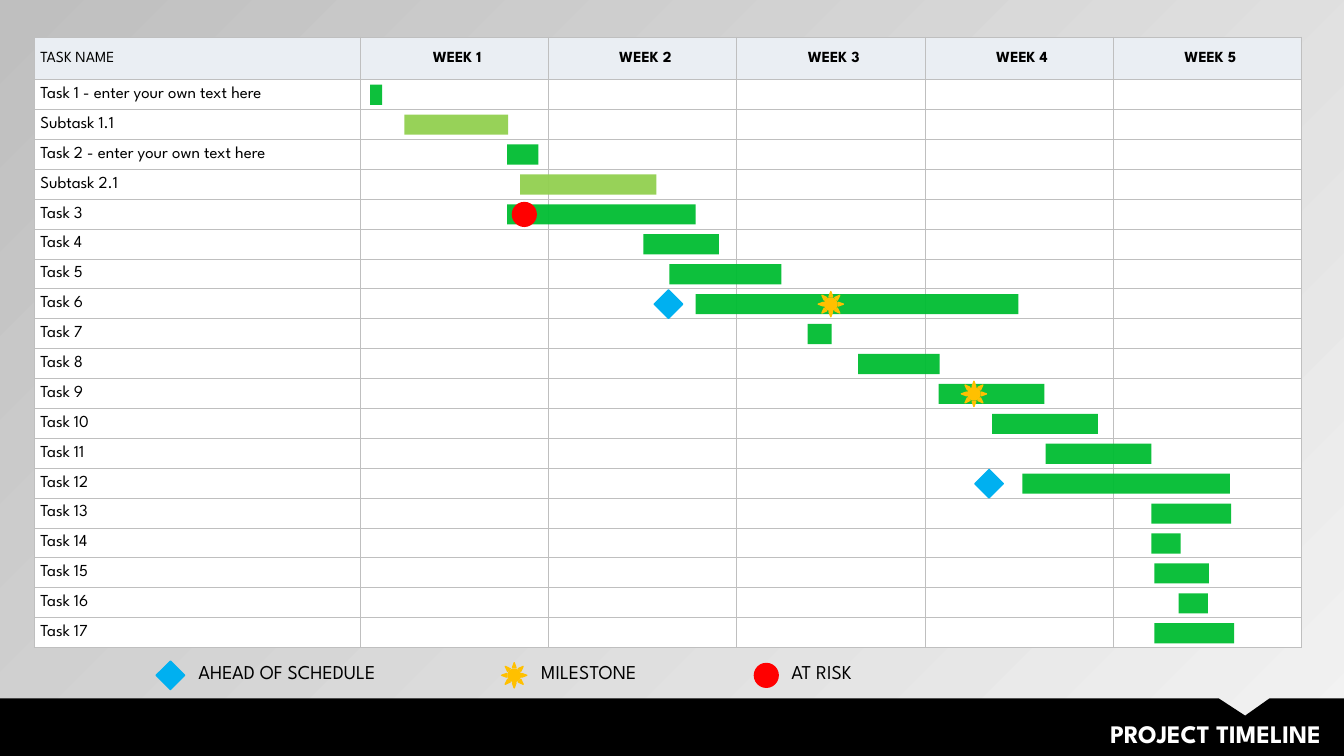
"""Build a five-week project timeline slide with a task table, bars and markers."""
from lxml import etree
from pptx import Presentation
from pptx import util as u
from pptx.dml.color import RGBColor
from pptx.enum import shapes, text
from pptx.oxml.ns import qn

COLORS = {
    "black": "000000", "white": "FFFFFF", "header": "EAEEF3", "grid": "BFBFBF",
    "light": "F2F2F2", "task": "00BD32", "subtask": "92D050",
    "ahead": "00B0F0", "milestone": "FFC000", "risk": "FF0000",
}
TABLE_LEFT, TABLE_TOP, TABLE_WIDTH, TABLE_HEIGHT = 0.34, 0.37, 12.57, 6.06
NAME_WIDTH, HEADER_HEIGHT, BAR_HEIGHT = 3.23, 0.42, 0.2
WEEKS = [f"WEEK {number}" for number in range(1, 6)]
TASKS = [
    ("Task 1 - enter your own text here", 3.67, 0.12),
    ("Subtask 1.1", 4.01, 1.03),
    ("Task 2 - enter your own text here", 5.03, 0.31),
    ("Subtask 2.1", 5.16, 1.35),
    ("Task 3", 5.03, 1.87),
    ("Task 4", 6.38, 0.75),
    ("Task 5", 6.64, 1.11),
    ("Task 6", 6.9, 3.2),
    ("Task 7", 8.01, 0.24),
    ("Task 8", 8.51, 0.81),
    ("Task 9", 9.31, 1.05),
    ("Task 10", 9.84, 1.05),
    ("Task 11", 10.37, 1.05),
    ("Task 12", 10.14, 2.06),
    ("Task 13", 11.42, 0.79),
    ("Task 14", 11.42, 0.29),
    ("Task 15", 11.45, 0.54),
    ("Task 16", 11.69, 0.29),
    ("Task 17", 11.45, 0.79),
]
ROW_HEIGHT = (TABLE_HEIGHT - HEADER_HEIGHT) / len(TASKS)
FIRST_BAR_CENTER = 0.94
MARKERS = {
    "ahead": (shapes.MSO_SHAPE.RECTANGLE, 0.2, True),
    "milestone": (shapes.MSO_SHAPE.SUN, 0.25, True),
    "risk": (shapes.MSO_SHAPE.OVAL, 0.25, False),
}
TASK_MARKERS = [
    ("risk", "Task 3", 5.2), ("milestone", "Task 6", 8.24), ("milestone", "Task 9", 9.66),
    ("ahead", "Task 6", 6.63), ("ahead", "Task 12", 9.81),
]
LEGEND = [
    ("ahead", 1.69, "AHEAD OF SCHEDULE", 1.87, 2.22),
    ("milestone", 5.1, "MILESTONE", 5.27, 1.23),
    ("risk", 7.6, "AT RISK", 7.75, 0.86),
]


def color(name):
    return RGBColor.from_string(COLORS[name])


class TimelineSlide:
    def __init__(self, presentation, font="League Spartan"):
        self.font = font
        self.slide = presentation.slides.add_slide(presentation.slide_layouts[6])

    def background(self, start, end, angle):
        fill = self.slide.background.fill
        fill.gradient()
        fill.gradient_angle = angle
        for stop, name in zip(fill.gradient_stops, (start, end)):
            stop.color.rgb = color(name)

    def run(self, paragraph, words, size, name="black", bold=False):
        run = paragraph.add_run()
        run.text = words
        run.font.name = self.font
        run.font.size = u.Pt(size)
        run.font.bold = bold
        run.font.color.rgb = color(name)

    def label(self, left, top, width, height, words, size, name="black",
              bold=False, align=text.PP_ALIGN.LEFT, wrap=False):
        box = self.slide.shapes.add_textbox(*map(u.Inches, (left, top, width, height)))
        frame = box.text_frame
        frame.word_wrap = wrap
        frame.auto_size = text.MSO_AUTO_SIZE.SHAPE_TO_FIT_TEXT
        frame.paragraphs[0].alignment = align
        self.run(frame.paragraphs[0], words, size, name, bold)

    def paint(self, shape, name, line=False, alpha=None):
        shape.shadow.inherit = False
        shape.fill.solid()
        shape.fill.fore_color.rgb = color(name)
        if line:
            shape.line.color.rgb = color(name)
            shape.line.width = u.Pt(1)
        else:
            shape.line.fill.background()
        if alpha:
            paint = shape._element.spPr.find(qn("a:solidFill"))[0]
            etree.SubElement(paint, qn("a:alpha"), val=str(alpha * 1000))

    def shape(self, kind, left, top, width, height, name, **style):
        shape = self.slide.shapes.add_shape(
            kind, *map(u.Inches, (left, top, width, height)))
        self.paint(shape, name, **style)
        return shape

    def marker(self, name, center_x, center_y):
        kind, size, outlined = MARKERS[name]
        shape = self.shape(kind, center_x - size / 2, center_y - size / 2,
                           size, size, name, line=outlined)
        shape.rotation = 45 if outlined else 0

    def outline(self, points, name):
        corners = [(u.Inches(x), u.Inches(y)) for x, y in points]
        builder = self.slide.shapes.build_freeform(*corners[0])
        builder.add_line_segments(corners[1:], close=True)
        self.paint(builder.convert_to_shape(), name)

    def cell(self, cell, words, fill, size, bold, align):
        cell.margin_left = u.Inches(0.06)
        cell.margin_right = cell.margin_top = cell.margin_bottom = 0
        cell.vertical_anchor = text.MSO_ANCHOR.MIDDLE
        cell.fill.solid()
        cell.fill.fore_color.rgb = color(fill)
        properties = cell._tc.get_or_add_tcPr()
        for position, side in enumerate("LRTB"):
            border = etree.Element(qn(f"a:ln{side}"), w=str(u.Pt(0.5)))
            paint = etree.SubElement(border, qn("a:solidFill"))
            etree.SubElement(paint, qn("a:srgbClr"), val=COLORS["grid"])
            properties.insert(position, border)
        paragraph = cell.text_frame.paragraphs[0]
        paragraph.alignment = align
        if words:
            self.run(paragraph, words, size, bold=bold)
        else:
            etree.SubElement(paragraph._p, qn("a:endParaRPr"), sz=str(size * 100))

    def table(self, rows):
        frame = self.slide.shapes.add_table(
            len(rows), len(rows[0]),
            *map(u.Inches, (TABLE_LEFT, TABLE_TOP, TABLE_WIDTH, TABLE_HEIGHT)))
        table = frame.table
        table.first_row = table.horz_banding = False
        week_width = (TABLE_WIDTH - NAME_WIDTH) / len(WEEKS)
        for index, column in enumerate(table.columns):
            column.width = u.Inches(week_width if index else NAME_WIDTH)
        for index, row in enumerate(table.rows):
            row.height = u.Inches(ROW_HEIGHT if index else HEADER_HEIGHT)
            for number, words in enumerate(rows[index]):
                is_week = index == 0 and number > 0
                self.cell(row.cells[number], words, "white" if index else "header",
                          12 if index else 11, is_week,
                          text.PP_ALIGN.CENTER if is_week else text.PP_ALIGN.LEFT)


def main():
    presentation = Presentation()
    presentation.slide_width = u.Inches(13.33)
    presentation.slide_height = u.Inches(7.5)
    timeline = TimelineSlide(presentation)
    timeline.background("light", "grid", 135)
    timeline.table([["TASK NAME", *WEEKS]]
                   + [[name] + [""] * len(WEEKS) for name, _, _ in TASKS])
    timeline.outline([(0, 6.93), (12.09, 6.93), (12.35, 7.1), (12.59, 6.93),
                      (13.33, 6.93), (13.33, 7.5), (0, 7.5)], "black")
    timeline.label(4.14, 7.08, 9.06, 0.4, "PROJECT TIMELINE", 18, "white",
                   bold=True, align=text.PP_ALIGN.RIGHT, wrap=True)
    centers = {}
    for index, (name, left, width) in enumerate(TASKS):
        centers[name] = FIRST_BAR_CENTER + index * ROW_HEIGHT
        timeline.shape(shapes.MSO_SHAPE.RECTANGLE, left, centers[name] - BAR_HEIGHT / 2,
                       width, BAR_HEIGHT,
                       "subtask" if name.startswith("Subtask") else "task", alpha=95)
    for marker, center_x, words, left, width in LEGEND:
        timeline.marker(marker, center_x, 6.7)
        timeline.label(left, 6.5, width, 0.34, words, 14)
    for marker, name, center_x in TASK_MARKERS:
        timeline.marker(marker, center_x, centers[name])
    presentation.save("out.pptx")


if __name__ == "__main__":
    main()
